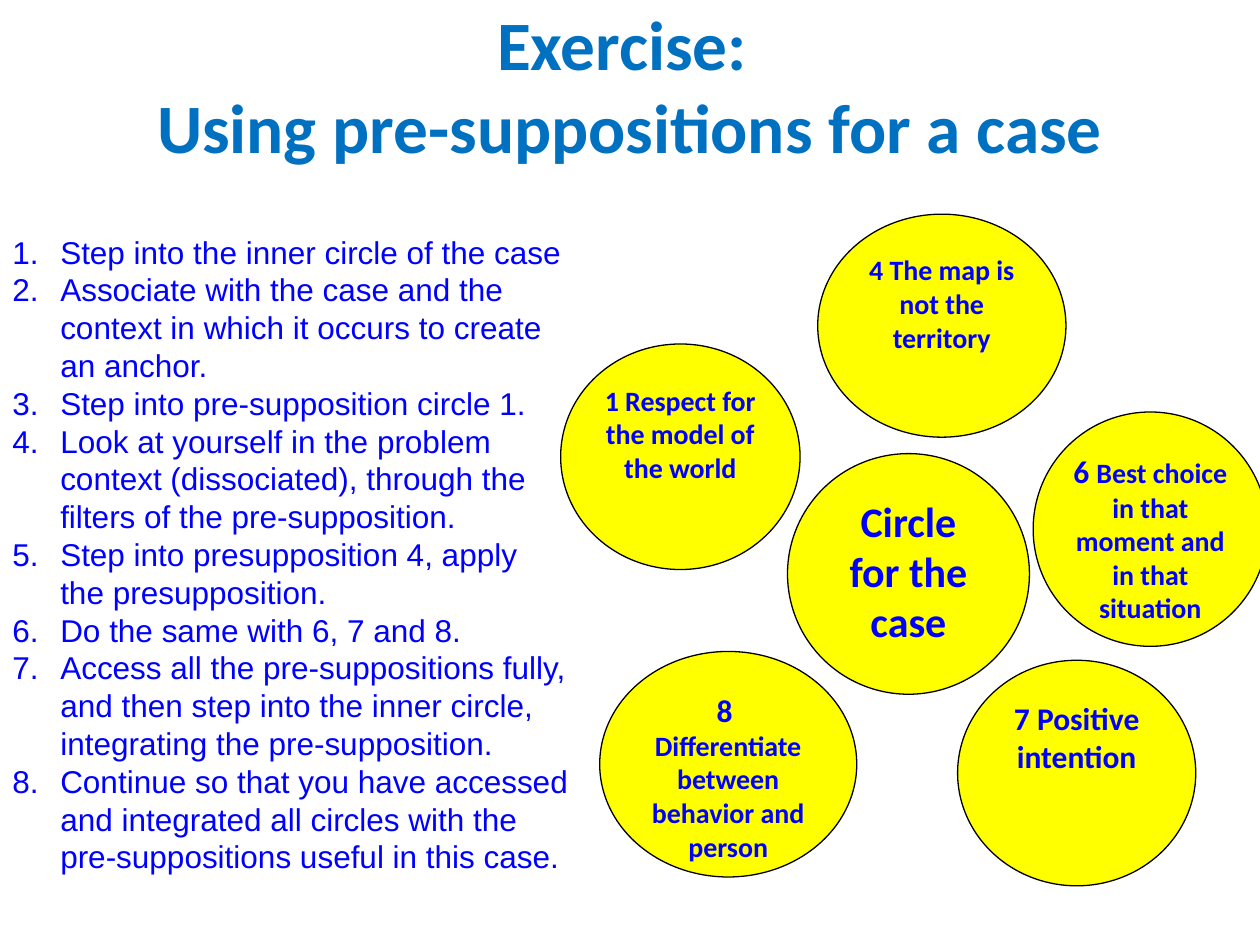
from pptx import Presentation
from pptx.dml.color import RGBColor as RGB
from pptx.enum.shapes import MSO_SHAPE as Shape
from pptx.enum.text import MSO_ANCHOR as Anchor, PP_ALIGN as Align
from pptx.oxml.ns import qn
from pptx.util import Inches, Pt
from lxml.etree import SubElement

COLORS = {"title": "0070C0", "text": "0000FF", "disc": "FFFF00", "edge": "000000"}
STEPS = [
    "Step into the inner circle of the case",
    "Associate with the case and the context in which it occurs to create an anchor.",
    "Step into pre-supposition circle 1.",
    "Look at yourself in the problem context (dissociated), through the filters "
    "of the pre-supposition.",
    "Step into presupposition 4, apply the presupposition.",
    "Do the same with 6, 7 and 8.",
    "Access all the pre-suppositions fully, and then step into the inner circle, "
    "integrating the pre-supposition.",
    "Continue so that you have accessed and integrated all circles with the "
    "pre-suppositions useful in this case.",
]
# box, then (text, size) pieces
CENTER = (6.25, 3.6, 1.92, 1.91), [("Circle for the case", 24)]
OUTER = [
    ((4.45, 2.73, 1.9, 1.79), [("1 Respect for the model of the world", 16)]),
    ((6.49, 1.7, 1.97, 1.77), [("4 The map is not the territory", 16)]),
    ((8.2, 3.27, 1.86, 1.86),
     [("6 ", 18), ("Best choice in that moment and in that situation", 16)]),
    ((7.6, 5.24, 1.89, 1.79), [("7 Positive intention", 18)]),
    ((4.76, 5.17, 2.04, 1.79),
     [("8 \v", 18), ("Differentiate between behavior and person", 16)]),
]


def color(name):
    return RGB.from_string(COLORS[name])


def write(para, text, size, font="Calibri", tint="text", bold=True, align=Align.CENTER):
    """Add text to a paragraph; a vertical tab starts a new line."""
    para.alignment = align
    for i, line in enumerate(text.split("\v")):
        if i:
            para.add_line_break()
        if line:
            run = para.add_run()
            run.text = line
            run.font.size, run.font.name, run.font.bold = Pt(size), font, bold
            run.font.color.rgb = color(tint)


def number(para, indent):
    """Give a paragraph an automatic number with a hanging indent."""
    props = para._p.get_or_add_pPr()
    props.set("marL", str(indent))
    props.set("indent", str(-indent))
    SubElement(props, qn("a:buFont"), typeface="+mj-lt")
    SubElement(props, qn("a:buAutoNum"), type="arabicPeriod")


def text_frame(slide, box):
    frame = slide.shapes.add_textbox(*map(Inches, box)).text_frame
    frame.word_wrap = True
    frame.vertical_anchor = Anchor.MIDDLE
    return frame


def add_title(slide, box):
    para = text_frame(slide, box).paragraphs[0]
    write(para, "Exercise: \vUsing pre-suppositions for a case", 39.6, tint="title")


def add_steps(slide, box):
    frame = text_frame(slide, box)
    for i, step in enumerate(STEPS):
        para = frame.add_paragraph() if i else frame.paragraphs[0]
        write(para, step, 18, font="Arial", bold=False, align=Align.LEFT)
        number(para, Inches(0.38))


def add_disc(slide, box, pieces, inset=0):
    disc = slide.shapes.add_shape(Shape.OVAL, *map(Inches, box))
    disc.shadow.inherit = False
    disc.fill.solid()
    disc.fill.fore_color.rgb = color("disc")
    disc.line.color.rgb = color("edge")
    disc.line.width = Pt(0.75)
    frame = disc.text_frame
    frame.word_wrap = True
    frame.vertical_anchor = Anchor.TOP
    frame.margin_left = frame.margin_right = Inches(inset)
    para = frame.paragraphs[0]
    para.space_after = Pt(10)
    for text, size in pieces:
        write(para, text, size)


def main():
    deck = Presentation()
    deck.slide_width, deck.slide_height = Inches(10), Inches(7.5)
    slide = deck.slides.add_slide(deck.slide_layouts[6])
    add_title(slide, (0.5, -0.03, 9, 1.4))
    add_disc(slide, *CENTER, inset=0.1)
    for box, pieces in OUTER:
        add_disc(slide, box, pieces)
    add_steps(slide, (0, 1.77, 4.61, 5.25))
    deck.save("out.pptx")


if __name__ == "__main__":
    main()
